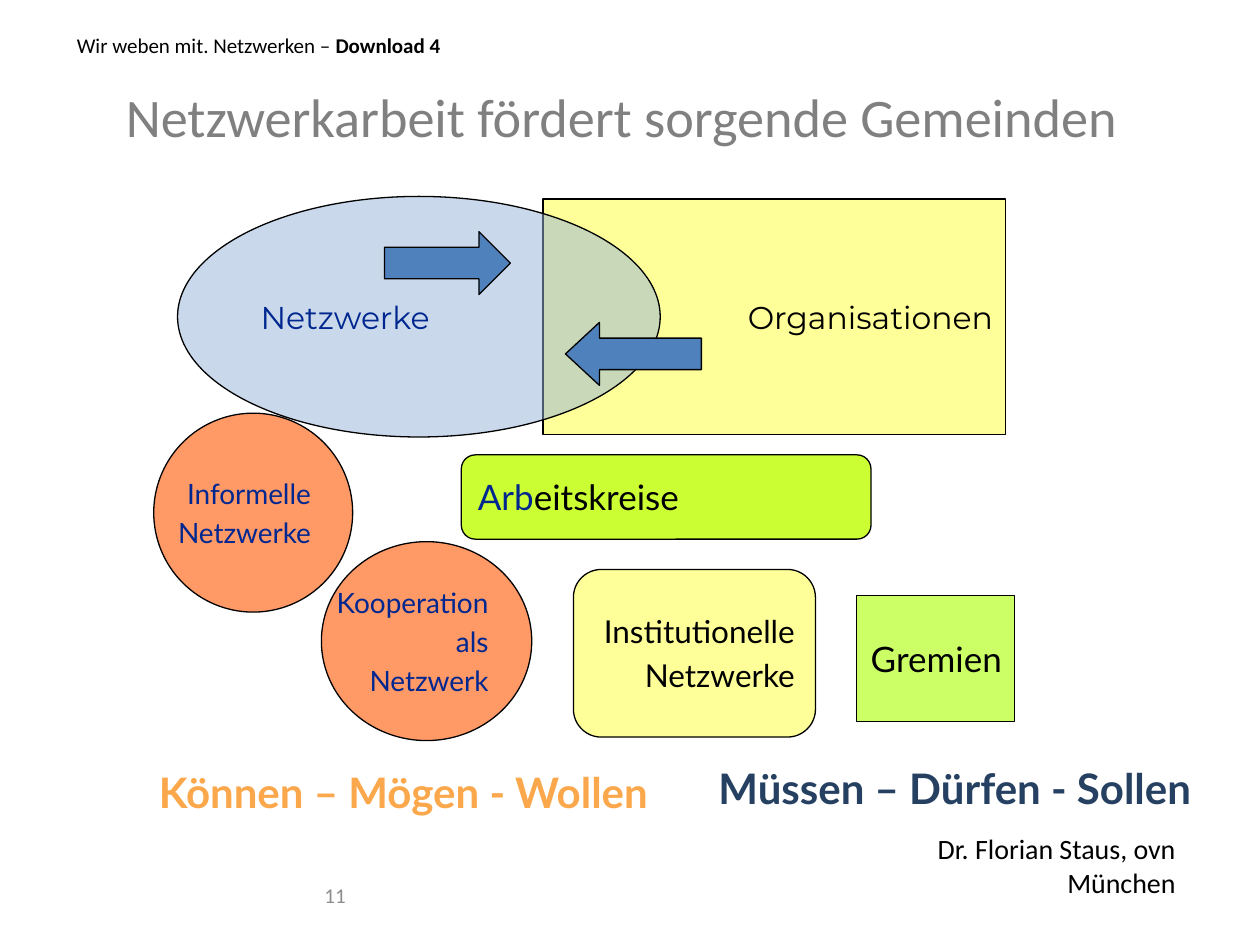
from lxml.etree import SubElement
from pptx import Presentation
from pptx.dml.color import RGBColor
from pptx.enum.shapes import MSO_SHAPE
from pptx.enum.text import MSO_ANCHOR, PP_ALIGN
from pptx.oxml.ns import qn
from pptx.util import Cm, Pt

BLACK = RGBColor(0x00, 0x00, 0x00)
NAVY = RGBColor(0x00, 0x27, 0x8F)
GREY = RGBColor(0x80, 0x80, 0x80)
LIGHT_GREY = RGBColor(0x8C, 0x8C, 0x8C)
YELLOW = RGBColor(0xFF, 0xFF, 0x99)
PALE_BLUE = RGBColor(0x95, 0xB3, 0xD7)
BLUE = RGBColor(0x4F, 0x81, 0xBD)
GREEN = RGBColor(0xCC, 0xFF, 0x66)
LIME = RGBColor(0xCC, 0xFF, 0x33)
SALMON = RGBColor(0xFF, 0x99, 0x66)
ORANGE = RGBColor(0xFB, 0xA7, 0x4B)
DARK_BLUE = RGBColor(0x25, 0x40, 0x61)

LEFT, CENTER, RIGHT = PP_ALIGN.LEFT, PP_ALIGN.CENTER, PP_ALIGN.RIGHT


def style_run(r, size, font, color, bold=False):
    r.font.size = Pt(size)
    r.font.name = font
    r.font.color.rgb = color
    r.font.bold = bold


def write(sp, lines, size, font, color, align=LEFT, bold=False, wrap=False,
          anchor=MSO_ANCHOR.MIDDLE):
    tf = sp.text_frame
    tf.text = "\n".join(lines)
    tf.word_wrap = wrap
    tf.vertical_anchor = anchor
    for i, p in enumerate(tf.paragraphs):
        p.alignment = align
        if i:
            p.space_before = Pt(size * 0.2)
        for r in p.runs:
            style_run(r, size, font, color, bold)
    return tf.paragraphs[0]


def add_shape(s, kind, x, y, w, h, fill):
    sp = s.shapes.add_shape(kind, Cm(x), Cm(y), Cm(w), Cm(h))
    sp.shadow.inherit = False
    sp.fill.solid()
    sp.fill.fore_color.rgb = fill
    sp.line.color.rgb = BLACK
    sp.line.width = Pt(0.75)
    return sp


def add_text(s, x, y, w, h, text, size, font, color, **options):
    sp = s.shapes.add_textbox(Cm(x), Cm(y), Cm(w), Cm(h))
    options = {"wrap": True, "anchor": MSO_ANCHOR.TOP, **options}
    return write(sp, [text], size, font, color, **options)


def set_alpha(sp, percent):
    color = sp._element.spPr.find(qn("a:solidFill"))[0]
    SubElement(color, qn("a:alpha")).set("val", str(percent * 1000))


def add_header(s, x, y, w):
    add_text(s, x, y + 0.21, w, 3.18, "Netzwerkarbeit fördert sorgende Gemeinden",
             31, "Calibri", GREY, align=CENTER, anchor=MSO_ANCHOR.MIDDLE)
    p = add_text(s, x + 0.21, y, 10.01, 0.76, "Wir weben mit. Netzwerken – ",
                 12, "Calibri", BLACK)
    r = p.add_run()
    r.text = "Download 4"
    style_run(r, 12, "Calibri", BLACK, True)


def add_overlap(s, x, y, w, h):
    sp = add_shape(s, MSO_SHAPE.RECTANGLE, x + w - 9.32, y + 0.05, 9.32, h - 0.1, YELLOW)
    write(sp, ["Organisationen"], 18, "Montserrat", BLACK, RIGHT)
    sp = add_shape(s, MSO_SHAPE.OVAL, x, y, 9.73, h, PALE_BLUE)
    set_alpha(sp, 50)
    write(sp, ["Netzwerke"], 18, "Montserrat", NAVY)
    add_shape(s, MSO_SHAPE.RIGHT_ARROW, x + 4.17, y + 0.71, 2.54, 1.27, BLUE)
    sp = add_shape(s, MSO_SHAPE.LEFT_ARROW, x + 7.82, y + 2.54, 2.74, 1.27, BLUE)
    sp.adjustments[1] = 0.54


def add_network_forms(s, x, y):
    forms = [
        (MSO_SHAPE.RECTANGLE, 14.17, 3.68, 3.18, 2.54, GREEN,
         ["Gremien"], 20, BLACK, RIGHT),
        (MSO_SHAPE.ROUNDED_RECTANGLE, 6.2, 0.84, 8.26, 1.7, LIME,
         ["Arb"], 20, NAVY, LEFT),
        (MSO_SHAPE.ROUNDED_RECTANGLE, 8.46, 3.15, 4.88, 3.38, YELLOW,
         ["Institutionelle", "Netzwerke"], 18, BLACK, RIGHT),
        (MSO_SHAPE.OVAL, 0, 0, 4.01, 4.01, SALMON,
         ["Informelle", "Netzwerke"], 16, NAVY, RIGHT),
        (MSO_SHAPE.OVAL, 3.38, 2.59, 4.24, 4.01, SALMON,
         ["Kooperation", "als", "Netzwerk"], 16, NAVY, RIGHT),
    ]
    for kind, dx, dy, w, h, fill, lines, size, color, align in forms:
        sp = add_shape(s, kind, x + dx, y + dy, w, h, fill)
        p = write(sp, lines, size, "Lato", color, align)
        if lines == ["Arb"]:
            r = p.add_run()
            r.text = "eitskreise"
            style_run(r, size, "Lato", BLACK)


def add_footer(s, x, y):
    add_text(s, x, y + 0.08, 12.5, 1.27, "Können – Mögen - Wollen",
             24, "Lato", ORANGE, align=RIGHT, bold=True)
    add_text(s, x + 10.95, y, 12.5, 1.27, "Müssen – Dürfen - Sollen",
             24, "Lato", DARK_BLUE, align=RIGHT, bold=True)
    add_text(s, x + 15.57, y + 1.4, 7.57, 0.94, "Dr. Florian Staus, ovn München",
             16, "Calibri", BLACK, align=RIGHT, wrap=False)
    add_text(s, x + 0.49, y + 2.29, 5.92, 1.02, "11", 12, "Calibri", LIGHT_GREY,
             align=RIGHT, anchor=MSO_ANCHOR.MIDDLE)


def main():
    prs = Presentation()
    prs.slide_width, prs.slide_height = Cm(25.4), Cm(19.05)
    s = prs.slides.add_slide(prs.slide_layouts[6])
    add_header(s, 1.09, 0.53, 22.86)
    add_overlap(s, 3.58, 3.96, 16.69, 4.85)
    add_network_forms(s, 3.1, 8.33)
    add_footer(s, 0.81, 15.24)
    prs.save("out.pptx")


if __name__ == "__main__":
    main()
